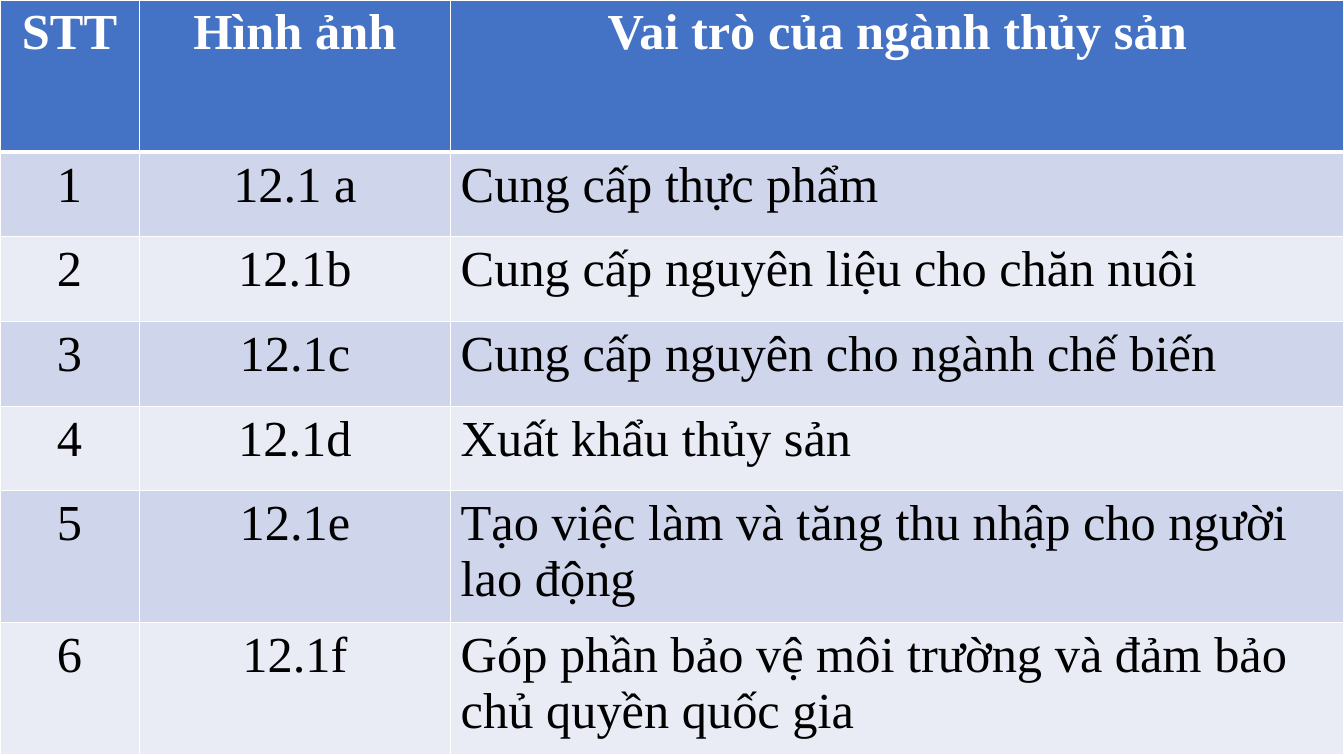
from lxml import etree
from pptx import Presentation
from pptx.dml.color import RGBColor
from pptx.enum.text import PP_ALIGN
from pptx.oxml.ns import qn
from pptx.util import Inches, Pt

CENTER, LEFT = PP_ALIGN.CENTER, PP_ALIGN.LEFT

WHITE = RGBColor(0xFF, 0xFF, 0xFF)
BLACK = RGBColor(0x00, 0x00, 0x00)
HEADER_BLUE = RGBColor(0x44, 0x72, 0xC4)
BAND_DARK = RGBColor(0xCF, 0xD5, 0xEA)
BAND_LIGHT = RGBColor(0xE9, 0xEB, 0xF5)

FONT, SIZE = "Times New Roman", Pt(36)
THIN, THICK = Pt(1), Pt(3)

# Grid of the table, in inches
COLUMNS = [1.38, 3.09, 8.86]
ROWS = [1.51] + [0.84] * 4 + [1.31] * 2

HEADINGS = ["STT", "Hình ảnh", "Vai trò của ngành thủy sản"]
ROLES = [
    ("12.1 a", "Cung cấp thực phẩm"),
    ("12.1b", "Cung cấp nguyên liệu cho chăn nuôi"),
    ("12.1c", "Cung cấp nguyên cho ngành chế biến"),
    ("12.1d", "Xuất khẩu thủy sản"),
    ("12.1e", "Tạo việc làm và tăng thu nhập cho người lao động"),
    ("12.1f", "Góp phần bảo vệ môi trường và đảm bảo chủ quyền quốc gia"),
]


def add_borders(cell, top, bottom):
    """White cell borders; they must come before the fill in the XML."""
    tcPr = cell._tc.get_or_add_tcPr()
    widths = {"a:lnL": THIN, "a:lnR": THIN, "a:lnT": top, "a:lnB": bottom}
    for tag, width in widths.items():
        ln = etree.SubElement(tcPr, qn(tag), w=str(int(width)))
        fill = etree.SubElement(ln, qn("a:solidFill"))
        etree.SubElement(fill, qn("a:srgbClr"), val=str(WHITE))


def fill_cell(cell, text, fill, color, bold, align):
    cell.fill.solid()
    cell.fill.fore_color.rgb = fill
    p = cell.text_frame.paragraphs[0]
    p.alignment = align
    r = p.add_run()
    r.text = text
    r.font.name, r.font.size, r.font.bold = FONT, SIZE, bold
    r.font.color.rgb = color


def add_roles_table(s, records):
    table = s.shapes.add_table(
        len(ROWS), len(COLUMNS), 0, 0, Inches(sum(COLUMNS)), Inches(sum(ROWS))
    ).table
    for column, width in zip(table.columns, COLUMNS):
        column.width = Inches(width)
    for row, height in zip(table.rows, ROWS):
        row.height = Inches(height)

    for i, record in enumerate(records):
        header = i == 0
        band = BAND_DARK if i % 2 else BAND_LIGHT
        for j, text in enumerate(record):
            cell = table.cell(i, j)
            # A thick rule parts the header from the first row
            add_borders(cell, THICK if i == 1 else THIN, THICK if header else THIN)
            fill_cell(
                cell,
                text,
                fill=HEADER_BLUE if header else band,
                color=WHITE if header else BLACK,
                bold=header,
                align=CENTER if header or j < 2 else LEFT,
            )


def main():
    prs = Presentation()
    prs.slide_width, prs.slide_height = Inches(13.33), Inches(7.5)
    s = prs.slides.add_slide(prs.slide_layouts[6])

    # Numbered roles under the headings
    numbered = [(str(n), *role) for n, role in enumerate(ROLES, 1)]
    add_roles_table(s, [HEADINGS] + numbered)

    prs.save("out.pptx")


if __name__ == "__main__":
    main()
